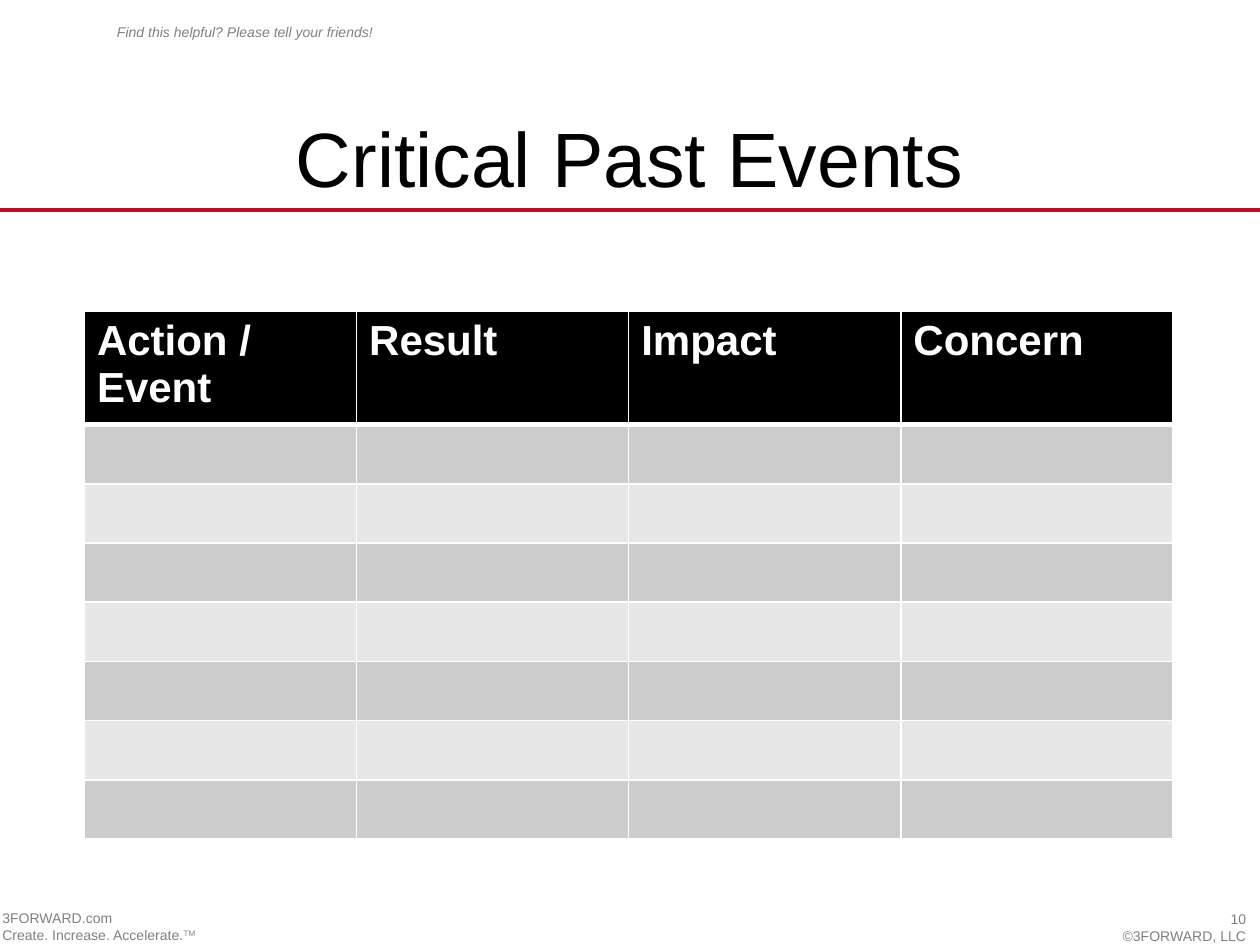
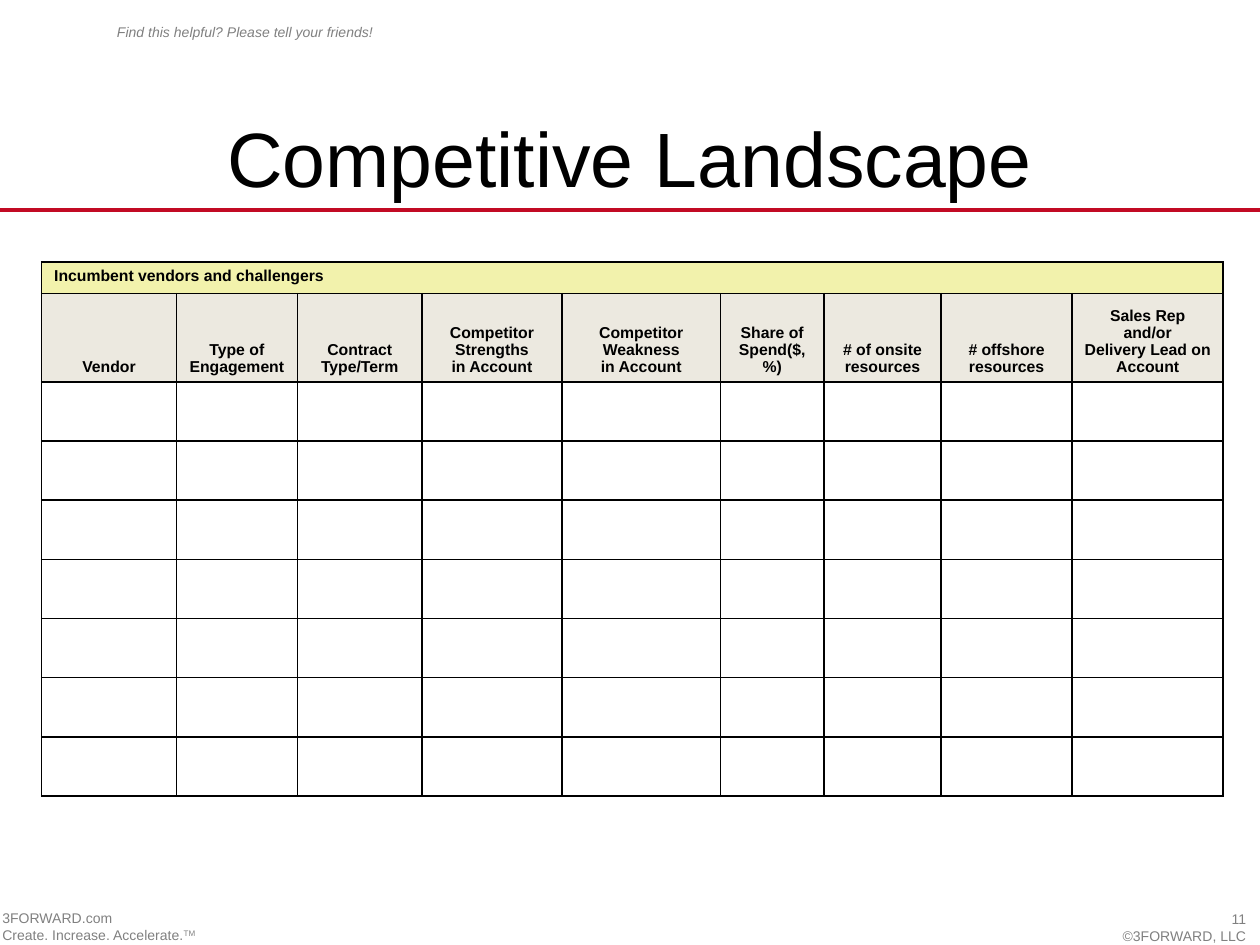
from dataclasses import dataclass

from lxml.etree import SubElement
from pptx import Presentation
from pptx.dml.color import RGBColor
from pptx.enum.shapes import MSO_CONNECTOR
from pptx.enum.text import MSO_ANCHOR, PP_ALIGN
from pptx.oxml.ns import qn
from pptx.util import Pt

PX = 9144  # EMU per px, 100 px to the inch


@dataclass(frozen=True)
class Theme:
    font: str = "Arial"
    black: RGBColor = RGBColor.from_string("000000")
    white: RGBColor = RGBColor.from_string("FFFFFF")
    red: RGBColor = RGBColor.from_string("C20A24")
    grey: RGBColor = RGBColor.from_string("808080")
    dark_band: RGBColor = RGBColor.from_string("CCCCCC")
    light_band: RGBColor = RGBColor.from_string("E7E7E7")
    yellow: RGBColor = RGBColor.from_string("F2F2AC")
    beige: RGBColor = RGBColor.from_string("ECE9E0")
    title_size: int = 44
    header_size: int = 24
    label_size: int = 9
    small_size: int = 8


THEME = Theme()


def write(frame, lines, size, color, align=PP_ALIGN.LEFT, bold=False, italic=False):
    """Fill a text frame with one paragraph per line, all in one style."""
    frame.word_wrap = True
    for index, line in enumerate(lines):
        paragraph = frame.add_paragraph() if index else frame.paragraphs[0]
        paragraph.text = line
        paragraph.alignment = align
        font = paragraph.font
        font.name, font.size, font.color.rgb = THEME.font, Pt(size), color
        font.bold, font.italic = bold, italic


def add_grid(slide, left, top, widths, heights, fills, border, header_rule=1):
    """Add a table with one fill per row; header_rule is the weight under row 0."""
    table = slide.shapes.add_table(
        len(heights), len(widths), left * PX, top * PX,
        sum(widths) * PX, sum(heights) * PX).table
    table.first_row = table.horz_banding = False
    for column, width in zip(table.columns, widths):
        column.width = width * PX
    for index, (row, height, fill) in enumerate(zip(table.rows, heights, fills)):
        row.height = height * PX
        weights = {"lnL": 1, "lnR": 1,
                   "lnT": header_rule if index == 1 else 1,
                   "lnB": header_rule if index == 0 else 1}
        for cell in row.cells:
            properties = cell._tc.get_or_add_tcPr()
            for side, weight in weights.items():
                line = SubElement(properties, qn(f"a:{side}"), w=str(Pt(weight)))
                solid = SubElement(line, qn("a:solidFill"))
                SubElement(solid, qn("a:srgbClr"), val=str(border))
            if fill is None:
                cell.fill.background()
            else:
                cell.fill.solid()
                cell.fill.fore_color.rgb = fill
    return table


presentation = Presentation()
presentation.slide_width = 1000 * PX
presentation.slide_height = 750 * PX
blank_layout = presentation.slide_layouts[6]

# Shared frame: red rule, tagline, title and footers
slides = []
for number, title in enumerate(["Critical Past Events", "Competitive Landscape"], start=10):
    slide = presentation.slides.add_slide(blank_layout)
    slides.append(slide)

    rule = slide.shapes.add_connector(MSO_CONNECTOR.STRAIGHT, 0, 167 * PX, 1000 * PX, 167 * PX)
    rule.line.color.rgb = THEME.red
    rule.line.width = Pt(2.25)
    SubElement(rule._element.spPr, qn("a:effectLst"))

    tagline = slide.shapes.add_textbox(83 * PX, 14 * PX, 308 * PX, 24 * PX)
    write(tagline.text_frame, ["Find this helpful? Please tell your friends!"],
          THEME.small_size, THEME.grey, italic=True)

    heading = slide.shapes.add_textbox(50 * PX, 82 * PX, 900 * PX, 84 * PX)
    heading.text_frame.vertical_anchor = MSO_ANCHOR.MIDDLE
    write(heading.text_frame, [title], THEME.title_size, THEME.black, PP_ALIGN.CENTER)

    page_footer = slide.shapes.add_textbox(766 * PX, 718 * PX, 233 * PX, 32 * PX)
    write(page_footer.text_frame, [str(number), "©3FORWARD, LLC"],
          THEME.small_size, THEME.grey, PP_ALIGN.RIGHT)

    site_footer = slide.shapes.add_textbox(-8 * PX, 717 * PX, 367 * PX, 37 * PX)
    write(site_footer.text_frame, ["3FORWARD.com", "Create. Increase. Accelerate."],
          THEME.small_size, THEME.grey)
    trademark = site_footer.text_frame.paragraphs[-1].add_run()
    trademark.text = "TM"
    trademark._r.get_or_add_rPr().set("baseline", "30000")

events_slide, landscape_slide = slides
BODY_ROWS = 7
BODY_HEIGHT = 47

# Critical Past Events
bands = [THEME.light_band if row % 2 else THEME.dark_band for row in range(BODY_ROWS)]
events = add_grid(events_slide, 67, 247, [216] * 4, [84] + [BODY_HEIGHT] * BODY_ROWS,
                  [THEME.black] + bands, THEME.white, header_rule=3)
for cell, label in zip(events.rows[0].cells, ["Action / Event", "Result", "Impact", "Concern"]):
    write(cell.text_frame, [label], THEME.header_size, THEME.white, bold=True)

# Competitive Landscape
vendor_columns = [
    ("Vendor", 107),
    ("Type of Engagement", 96),
    ("Contract Type/Term", 99),
    ("Competitor Strengths\vin Account", 111),
    ("Competitor Weakness\vin Account", 126),
    ("Share of Spend($, %)", 82),
    ("# of onsite resources", 93),
    ("# offshore resources", 104),
    ("Sales Rep and/or\vDelivery Lead on Account", 120),
]
vendors = add_grid(landscape_slide, 33, 208, [width for _, width in vendor_columns],
                   [25, 70] + [BODY_HEIGHT] * BODY_ROWS,
                   [THEME.yellow, THEME.beige] + [None] * BODY_ROWS, THEME.black)
banner = vendors.cell(0, 0)
banner.merge(vendors.cell(0, len(vendor_columns) - 1))
write(banner.text_frame, ["Incumbent vendors and challengers"],
      THEME.label_size, THEME.black, bold=True)
banner.text_frame.paragraphs[0].line_spacing = 0.95
for cell, (label, _) in zip(vendors.rows[1].cells, vendor_columns):
    cell.vertical_anchor = MSO_ANCHOR.BOTTOM
    write(cell.text_frame, [label], THEME.label_size, THEME.black, PP_ALIGN.CENTER, bold=True)
    cell.text_frame.paragraphs[0].line_spacing = 0.95

presentation.save("out.pptx")
